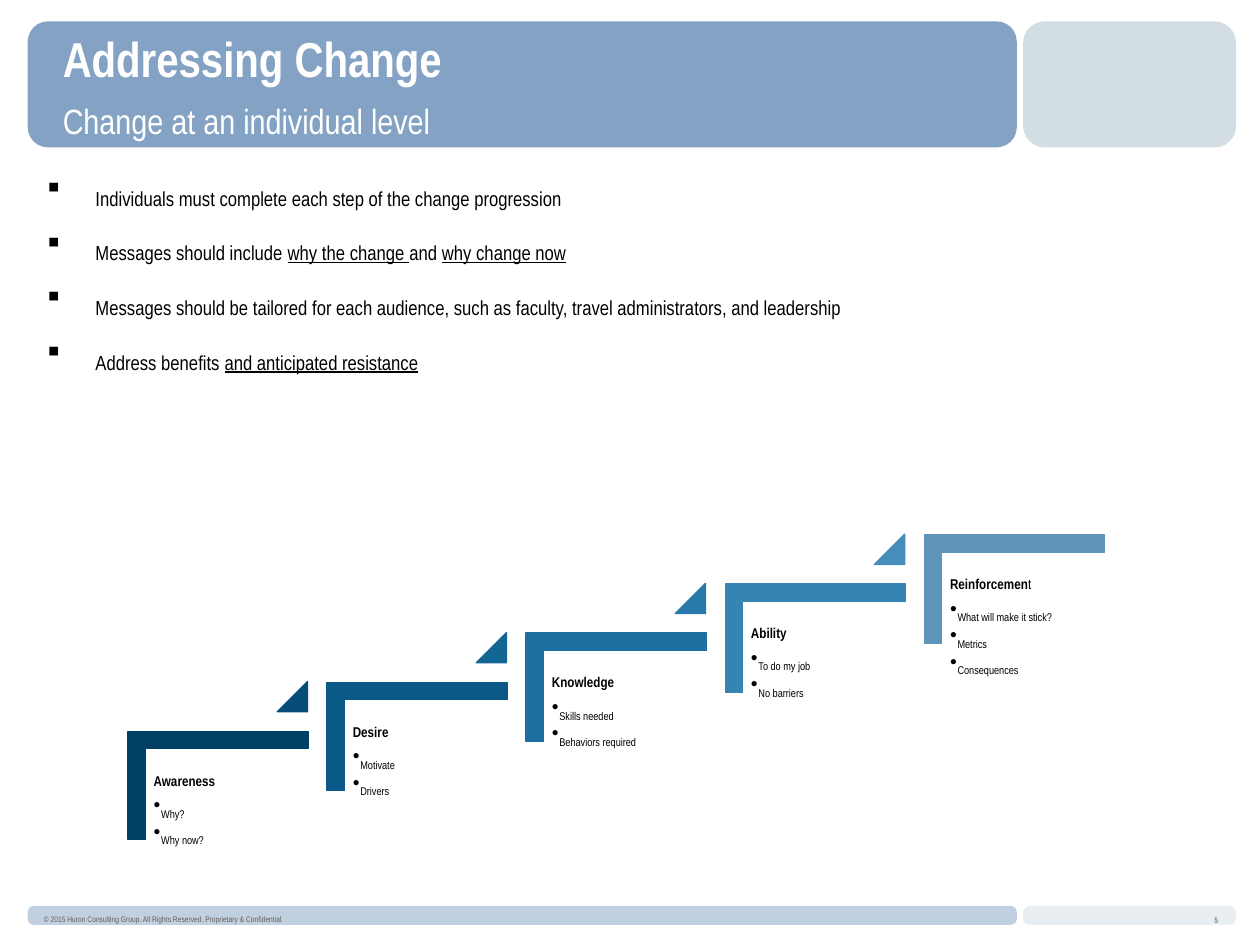
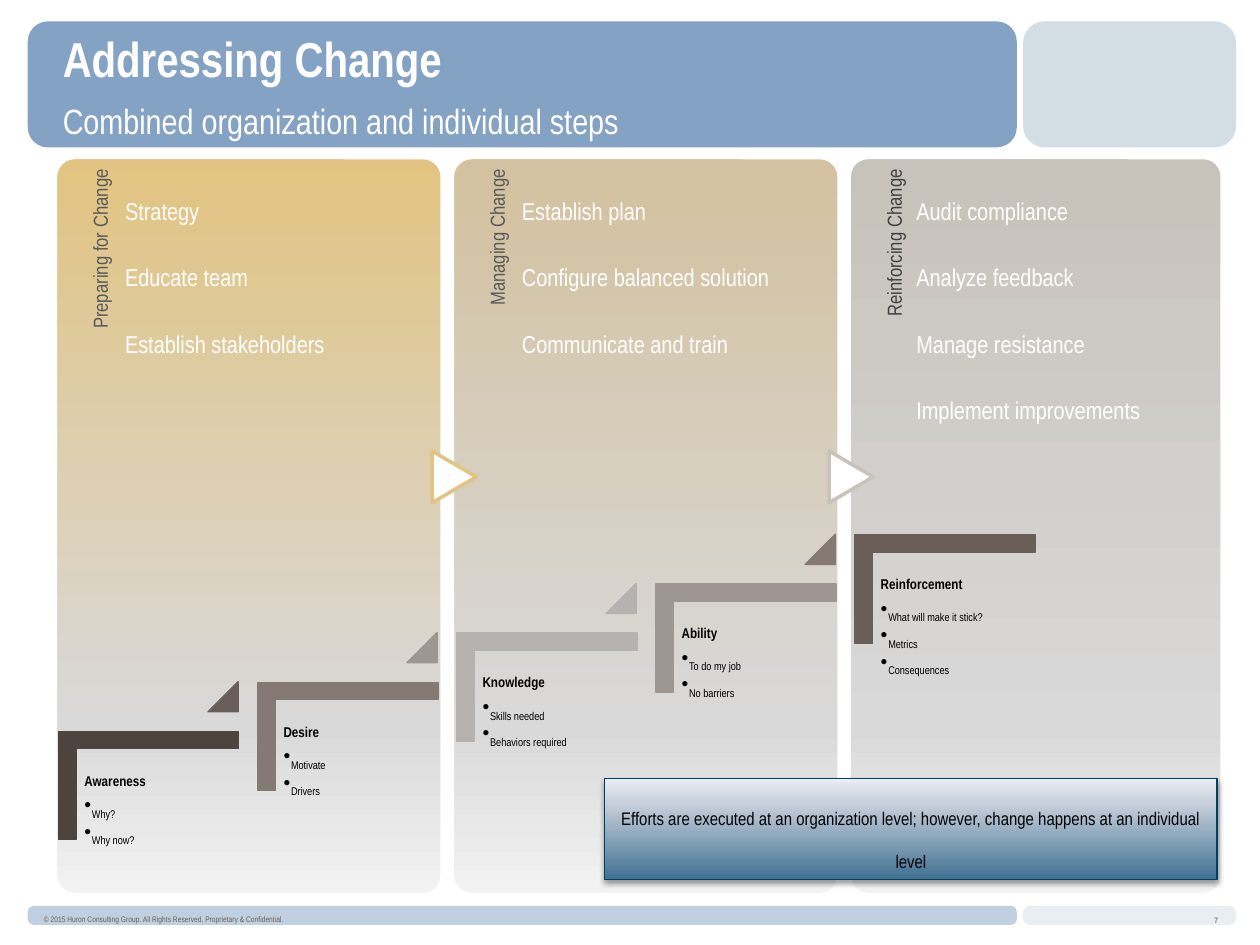
import dataclasses

import lxml.etree
import pptx
import pptx.dml.color
import pptx.enum.shapes
import pptx.enum.text
import pptx.oxml.ns
import pptx.util

Inches, Pt = pptx.util.Inches, pptx.util.Pt
qn = pptx.oxml.ns.qn
SHAPE = pptx.enum.shapes.MSO_SHAPE
ALIGN = pptx.enum.text.PP_ALIGN
ANCHOR = pptx.enum.text.MSO_ANCHOR


@dataclasses.dataclass(frozen=True)
class Theme:
    font: str = "Arial Narrow"
    blue: str = "84A3C4"
    pale: str = "D3DEE4"
    white: str = "FFFFFF"
    black: str = "000000"
    number: str = "808080"
    footer: str = "675C53"
    navy: str = "004063"
    title_pt: int = 28
    subtitle_pt: int = 20
    body_pt: int = 20
    column_pt: int = 24
    callout_pt: int = 18
    step_pt: int = 14
    detail_pt: int = 11
    footer_pt: int = 8


T = Theme()

TITLE = "Addressing Change"
COPYRIGHT = "© 2015 Huron Consulting Group. All Rights Reserved. Proprietary & Confidential."

# box, corner ratio, colour, opacity
BANDS = [
    ((8.12, 7.19, 1.69, 0.15), 0.35, T.pale, 50),
    ((0.22, 7.19, 7.85, 0.15), 0.31, T.blue, 50),
    ((8.12, 0.17, 1.69, 1), 0.17, T.pale, 100),
    ((0.22, 0.17, 7.85, 1), 0.16, T.blue, 100),
]

# (text, underlined) runs of each point
POINTS = [
    [("Individuals must complete each step of the change progression", False)],
    [("Messages should include ", False), ("why the change ", True),
     ("and ", False), ("why change now", True)],
    [("Messages should be tailored for each audience, such as faculty, "
      "travel administrators, and leadership", False)],
    [("Address benefits ", False), ("and anticipated resistance", True)],
]

STEPS = [
    ("Awareness", ["Why?", "Why now?"]),
    ("Desire", ["Motivate", "Drivers"]),
    ("Knowledge", ["Skills needed", "Behaviors required"]),
    ("Ability", ["To do my job", "No barriers"]),
    ("Reinforcement", ["What will make it stick?", "Metrics", "Consequences"]),
]
# Corner and triangle colours alternate, from the lowest step up
BLUE_STAIRS = ["004165", "054D76", "0B5986", "136594", "1D6FA1",
               "287AAB", "3684B4", "458EBB", "5E95B8"]
BROWN_STAIRS = ["4C443D", "695F58", "847A73", "9D9691", "B5B2AF",
                "B5B2AF", "9D9691", "847A73", "695F58"]

# label, label colour, top colour, width, colour of the arrow leading in, items
PHASES = [
    ("Preparing for Change", "595959", "E2C381", 3.07, None,
     ["Strategy", "Educate team", "Establish stakeholders"]),
    ("Managing Change", "595959", "D3C19F", 3.07, "E2C381",
     ["Establish plan", "Configure balanced solution", "Communicate and train"]),
    ("Reinforcing Change", "404040", "C7C2BA", 2.96, "C7C2BA",
     ["Audit compliance", "Analyze feedback", "Manage resistance",
      "Implement improvements"]),
]
CALLOUT = ("Efforts are executed at an organization level; "
           "however, change happens at an individual level")


def rgb(color):
    return pptx.dml.color.RGBColor.from_string(color)


def sub(parent, tag, **attrs):
    return lxml.etree.SubElement(parent, qn(tag), attrs)


def add_shape(s, kind, box, fill=None, line=None, weight=0.75, adj=(), rotation=0):
    sp = s.shapes.add_shape(kind, *map(Inches, box))
    sp.shadow.inherit = False
    sp.rotation = rotation
    for i, value in enumerate(adj):
        sp.adjustments[i] = value
    if fill:
        sp.fill.solid()
        sp.fill.fore_color.rgb = rgb(fill)
    if line:
        sp.line.color.rgb = rgb(line)
        sp.line.width = Pt(weight)
    else:
        sp.line.fill.background()
    return sp


def add_corner(s, box, color):
    """Add the L-shaped preset, which MSO_SHAPE does not list."""
    sp = add_shape(s, SHAPE.RECTANGLE, box, color, color, rotation=90)
    geometry = sp._element.spPr.find(qn("a:prstGeom"))
    geometry.set("prst", "corner")
    for name in ("adj1", "adj2"):
        sub(geometry.find(qn("a:avLst")), "a:gd", name=name, fmla="val 16100")


def set_gradient(sp, stops, angle):
    """Fill with (position, colour) stops; angle runs counter-clockwise."""
    sp.fill.gradient()
    sp.fill.gradient_angle = angle
    gs_list = sp._element.spPr.find(qn("a:gradFill")).find(qn("a:gsLst"))
    for gs in list(gs_list):
        gs_list.remove(gs)
    for position, color in stops:
        gs = sub(gs_list, "a:gs", pos=str(position * 1000))
        sub(gs, "a:srgbClr", val=color)


def set_frame(sp, insets=(0.1, 0.05, 0.1, 0.05), anchor=ANCHOR.TOP):
    tf = sp.text_frame
    tf.word_wrap = True
    tf.vertical_anchor = anchor
    tf.margin_left, tf.margin_top, tf.margin_right, tf.margin_bottom = map(Inches, insets)
    return tf


def add_text(s, box, rotation=0, **frame):
    sp = s.shapes.add_textbox(*map(Inches, box))
    sp.rotation = rotation
    return set_frame(sp, **frame)


def add_paragraph(tf, first=False, align=ALIGN.LEFT, before=0, after=0,
                  spacing=None, bullet=None, indent=0):
    p = tf.paragraphs[0] if first else tf.add_paragraph()
    p.alignment = align
    p.space_before = Pt(0 if first else before)
    p.space_after = Pt(after)
    if spacing:
        p.line_spacing = spacing
    if bullet:
        pPr = p._p.get_or_add_pPr()
        pPr.set("marL", str(Inches(indent)))
        pPr.set("indent", str(-Inches(indent)))
        sub(pPr, "a:buFont", typeface="Arial")
        sub(pPr, "a:buChar", char=bullet)
    return p


def add_run(p, text, size, color, bold=False, underline=False, lowered=True):
    """Add a run, by default set as a subscript like most text here."""
    r = p.add_run()
    r.text = text
    r.font.name = T.font
    r.font.size = Pt(size)
    r.font.bold = bold
    r.font.underline = underline
    r.font.color.rgb = rgb(color)
    if lowered:
        r._r.get_or_add_rPr().set("baseline", "-25000")


def add_bands(s):
    for box, ratio, color, opacity in BANDS:
        sp = add_shape(s, SHAPE.ROUNDED_RECTANGLE, box, color, adj=[ratio])
        if opacity < 100:
            clr = sp._element.spPr.find(qn("a:solidFill"))[0]
            sub(clr, "a:alpha", val=str(opacity * 1000))


def add_titles(s, subtitle):
    for text, box, size, bold in [
        (TITLE, (0.4, 0.18, 8.5, 1.21), T.title_pt, True),
        (subtitle, (0.4, 0.74, 7, 0.62), T.subtitle_pt, False),
    ]:
        p = add_paragraph(add_text(s, box), first=True)
        add_run(p, text, size, T.white, bold=bold, lowered=False)


def add_footer(s, number):
    for text, box, color, bold in [
        (number, (9.54, 7.11, 0.32, 0.31), T.number, True),
        (COPYRIGHT, (0.25, 7.06, 3.82, 0.4), T.footer, False),
    ]:
        p = add_paragraph(add_text(s, box, anchor=ANCHOR.MIDDLE), first=True)
        add_run(p, text, T.footer_pt, color, bold=bold)


def add_stairs(s, left, colors, plain_tail=0):
    """Draw the steps; plain_tail letters of the last heading are not bold."""
    top, run, rise = 5.52, 1.58, 0.39
    for i, (heading, details) in enumerate(STEPS):
        x, y = left + i * run, top - i * rise
        last = i == len(STEPS) - 1
        add_corner(s, (x, y, 0.86, 1.43), colors[2 * i])
        tf = add_text(s, (x - 0.14, y + 0.42, 1.29, 1.13), insets=[0.06] * 4)
        p = add_paragraph(tf, first=True, after=0.35 * T.step_pt, spacing=0.9)
        cut = len(heading) - (plain_tail if last else 0)
        add_run(p, heading[:cut], T.step_pt, T.black, bold=True)
        if cut < len(heading):
            add_run(p, heading[cut:], T.step_pt, T.black)
        for detail in details:
            p = add_paragraph(tf, after=0.15 * T.detail_pt, spacing=0.9,
                              bullet="•", indent=0.06)
            add_run(p, detail, T.detail_pt, T.black)
        if not last:
            color = colors[2 * i + 1]
            add_shape(s, SHAPE.ISOSCELES_TRIANGLE, (x + 0.9, y - 0.11, 0.24, 0.24),
                      color, color, adj=[1])


def add_points(s):
    tf = add_text(s, (0.28, 1.24, 9.46, 3.2))
    for i, runs in enumerate(POINTS):
        p = add_paragraph(tf, first=i == 0, before=0.2 * T.body_pt,
                          bullet="▪", indent=0.38)
        for text, underline in runs:
            add_run(p, text, T.body_pt, T.black, underline=underline)


def add_phases(s):
    top, height, pitch = 1.25, 5.85, 3.15
    for i, (label, label_color, color, width, arrow, items) in enumerate(PHASES):
        x = 0.44 + i * pitch
        sp = add_shape(s, SHAPE.ROUNDED_RECTANGLE, (x, top, width, height),
                       line=T.white, weight=2, adj=[0.05])
        set_gradient(sp, [(0, color), (77, "D9D9D9"), (100, "F2F2F2")], 270)
        tf = add_text(s, (x - 2.09, 3.34, 4.8, 0.61), rotation=270,
                      insets=(0, 0.07, 0.1, 0))
        p = add_paragraph(tf, first=True, align=ALIGN.RIGHT,
                          after=0.35 * T.body_pt, spacing=0.9)
        add_run(p, label, T.body_pt, label_color)
        if arrow:
            add_shape(s, SHAPE.FLOWCHART_EXTRACT, (x - 0.19, 3.61, 0.41, 0.35),
                      T.white, arrow, weight=2, rotation=90)
        tf = add_text(s, (x + 0.18 * width, top, 0.74 * width, height),
                      insets=(0, 0.09, 0, 0))
        for j, item in enumerate(items):
            p = add_paragraph(tf, first=j == 0, after=0.35 * T.column_pt, spacing=0.9)
            add_run(p, item, T.column_pt, T.white)


def add_callout(s):
    sp = add_shape(s, SHAPE.RECTANGLE, (4.8, 6.18, 4.86, 0.8), line=T.navy)
    set_gradient(sp, [(0, "407191"), (77, "CAD1DD"), (100, "EBEEF2")], 90)
    effects = sp._element.spPr.find(qn("a:effectLst"))
    shadow = sub(effects, "a:outerShdw", blurRad=str(Pt(3.1)), dist=str(Pt(1.6)),
                 dir="5400000", rotWithShape="0")
    sub(sub(shadow, "a:srgbClr", val=T.black), "a:alpha", val="38000")
    tf = set_frame(sp, anchor=ANCHOR.MIDDLE)
    p = add_paragraph(tf, first=True, align=ALIGN.CENTER)
    add_run(p, CALLOUT, T.callout_pt, T.black)


def main():
    prs = pptx.Presentation()
    prs.slide_width, prs.slide_height = Inches(10), Inches(7.5)
    blank = prs.slide_layouts[6]

    s = prs.slides.add_slide(blank)
    add_bands(s)
    add_titles(s, "Change at an individual level")
    add_stairs(s, 1.3, BLUE_STAIRS, plain_tail=1)
    add_footer(s, "5")
    add_points(s)

    s = prs.slides.add_slide(blank)
    add_bands(s)
    add_phases(s)
    add_titles(s, "Combined organization and individual steps")
    add_stairs(s, 0.75, BROWN_STAIRS)
    add_footer(s, "7")
    add_callout(s)

    prs.save("out.pptx")


if __name__ == "__main__":
    main()
